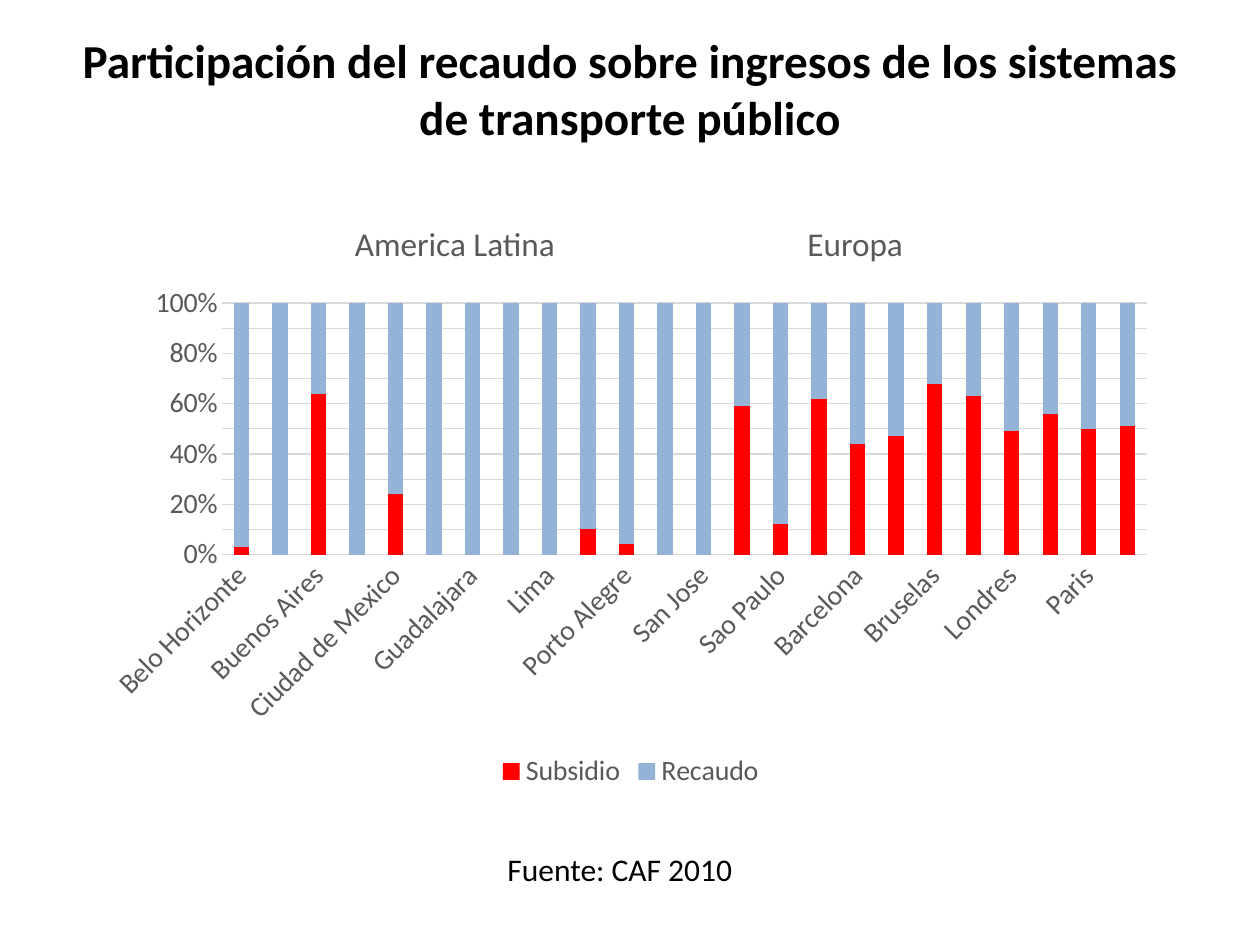
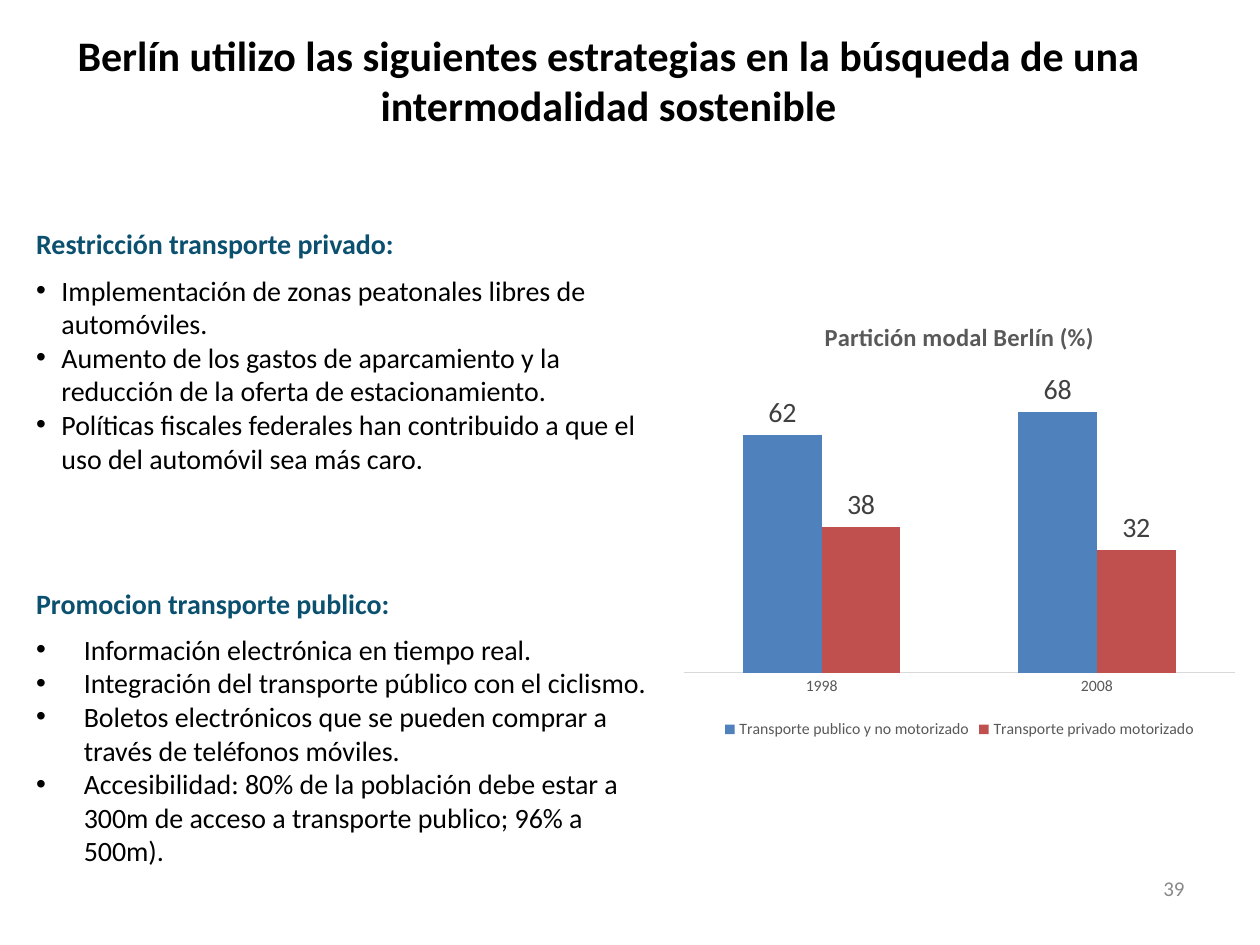
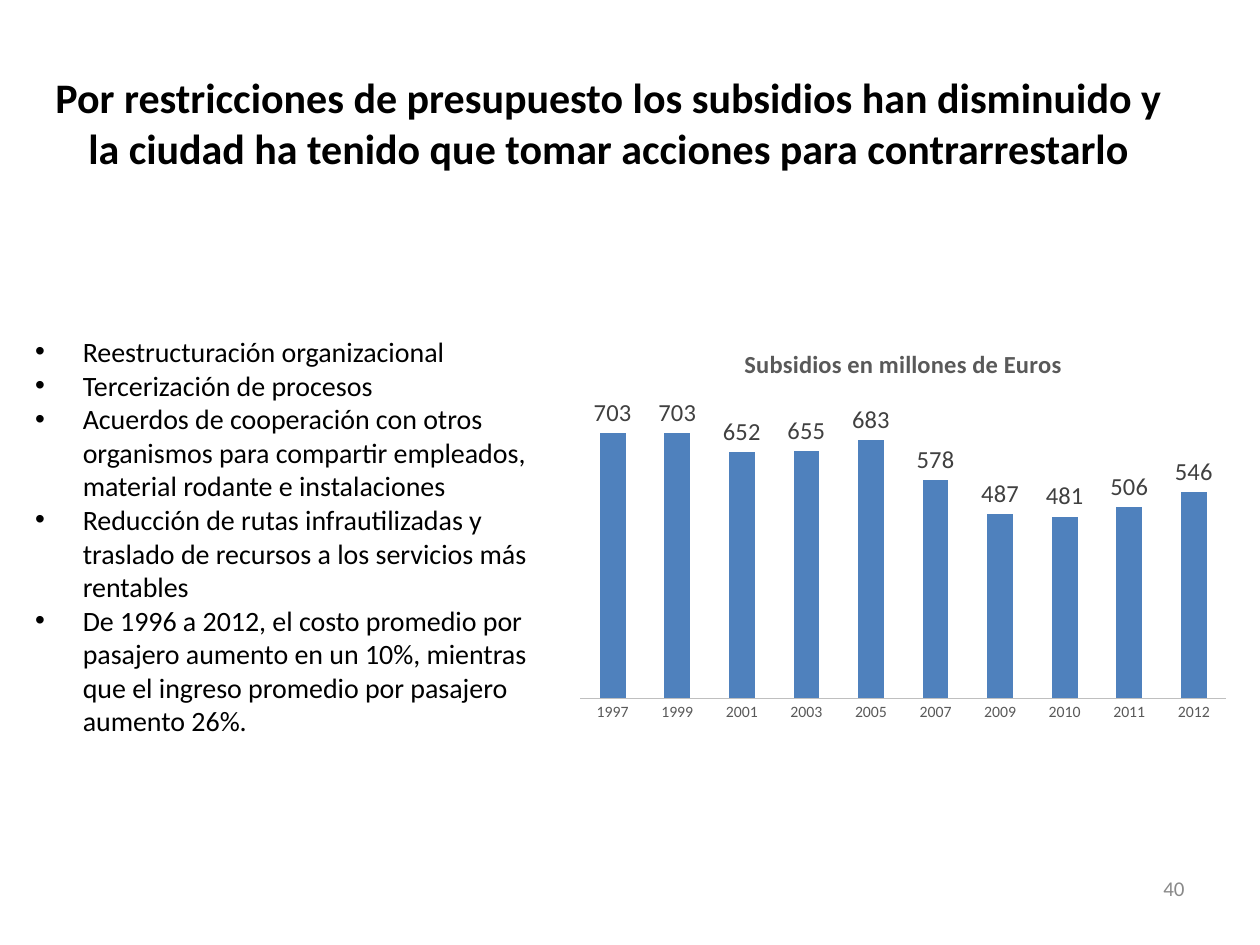
import lxml.etree
import pptx
import pptx.chart.data
import pptx.dml.color
import pptx.enum.chart
import pptx.enum.text
import pptx.oxml.ns
import pptx.util

Cm = pptx.util.Cm
Pt = pptx.util.Pt
RGBColor = pptx.dml.color.RGBColor
Align = pptx.enum.text.PP_ALIGN
Anchor = pptx.enum.text.MSO_ANCHOR
ChartType = pptx.enum.chart.XL_CHART_TYPE
qn = pptx.oxml.ns.qn

FONT = "Calibri"
BLACK = RGBColor(0, 0, 0)
TEAL = RGBColor(0x0B, 0x50, 0x6F)
NUMBER_GREY = RGBColor(0x89, 0x89, 0x89)
CHART_GREY = RGBColor(0x59, 0x59, 0x59)
LABEL_GREY = RGBColor(0x40, 0x40, 0x40)
PALE_GREY = RGBColor(0xD9, 0xD9, 0xD9)
AXIS_GREY = RGBColor(0xBF, 0xBF, 0xBF)
RED = RGBColor(0xFF, 0, 0)
PALE_BLUE = RGBColor(0x95, 0xB3, 0xD7)
BLUE = RGBColor(0x4F, 0x81, 0xBD)
BRICK = RGBColor(0xC0, 0x50, 0x4D)

SUBSIDY_PAIRS = [
    ("Belo Horizonte", 0.03, 0), ("Buenos Aires", 0.64, 0),
    ("Ciudad de Mexico", 0.24, 0), ("Guadalajara", 0, 0),
    ("Lima", 0, 0.1), ("Porto Alegre", 0.04, 0),
    ("San Jose", 0, 0.59), ("Sao Paulo", 0.12, 0.62),
    ("Barcelona", 0.44, 0.47), ("Bruselas", 0.68, 0.63),
    ("Londres", 0.49, 0.56), ("Paris", 0.5, 0.51),
]
REGIONS = [("America Latina", 6.17), ("Europa", 14.24)]
MODAL_SPLIT = [
    ("Transporte publico y no motorizado", (62, 68), BLUE),
    ("Transporte privado motorizado", (38, 32), BRICK),
]
SUBSIDY_TITLE = "Subsidios en millones de Euros"
SUBSIDY_MILLIONS = {
    "1997": 703, "1999": 703, "2001": 652, "2003": 655, "2005": 683,
    "2007": 578, "2009": 487, "2010": 481, "2011": 506, "2012": 546,
}
RESTRICTIONS = [
    "Implementación de zonas peatonales libres de automóviles.",
    "Aumento de los gastos de aparcamiento y la reducción de la oferta de estacionamiento.",
    "Políticas fiscales federales han contribuido a que el uso del automóvil sea más caro.",
]
PROMOTIONS = [
    "Información electrónica en tiempo real.",
    "Integración del transporte público con el ciclismo.",
    "Boletos electrónicos que se pueden comprar a través de teléfonos móviles.",
    "Accesibilidad: 80% de la población debe estar a 300m de acceso a transporte publico; 96% a 500m).",
]
ACTIONS = [
    "Reestructuración organizacional",
    "Tercerización de procesos",
    "Acuerdos de cooperación con otros organismos para compartir empleados, material rodante e instalaciones",
    "Reducción de rutas infrautilizadas y traslado de recursos a los servicios más rentables",
    "De 1996 a 2012, el costo promedio por pasajero aumento en un 10%, mientras que el ingreso promedio por pasajero aumento 26%.",
]


def style_font(font, size, color, bold=False):
    font.name = FONT
    font.size = Pt(size)
    font.bold = bold
    font.color.rgb = color


def add_bullet(para, indent):
    properties = para._p.get_or_add_pPr()
    properties.set("marL", str(Cm(indent)))
    properties.set("indent", str(-Cm(indent)))
    lxml.etree.SubElement(properties, qn("a:buFont")).set("typeface", "Arial")
    lxml.etree.SubElement(properties, qn("a:buChar")).set("char", "•")


def add_text(page, text, place, size=16, color=BLACK, bold=False, align=Align.LEFT,
             anchor=Anchor.MIDDLE, bottom=0.13, bullets=(), indent=0.96):
    box = page.shapes.add_textbox(*map(Cm, place))
    frame = box.text_frame
    frame.word_wrap = True
    frame.vertical_anchor = anchor
    frame.margin_bottom = Cm(bottom)
    lines = [(text, False)] if text else []
    lines += [(bullet, True) for bullet in bullets]
    for index, (line, bulleted) in enumerate(lines):
        para = frame.paragraphs[0] if index == 0 else frame.add_paragraph()
        if bulleted:
            add_bullet(para, indent)
            if text and index == 1:
                para.space_before = Pt(7.2)
        para.alignment = align
        span = para.add_run()
        span.text = line
        style_font(span.font, size, BLACK if bulleted else color, bold and not bulleted)


def add_title(page, text, place, size=24, bottom=0.13):
    add_text(page, text, place, size=size, bold=True, align=Align.CENTER, bottom=bottom)


def add_page_number(page, number):
    add_text(page, number, (18.21, 17.65, 5.92, 1.02), size=12, color=NUMBER_GREY,
             align=Align.RIGHT, bottom=0.64)


def set_plot_layout(chart, plot_place):
    area = chart._chartSpace.chart.plotArea
    for old in area.findall(qn("c:layout")):
        area.remove(old)
    layout = lxml.etree.Element(qn("c:layout"))
    area.insert(0, layout)
    manual = lxml.etree.SubElement(layout, qn("c:manualLayout"))
    settings = [("layoutTarget", "inner"), ("xMode", "edge"), ("yMode", "edge")]
    settings += zip("xywh", plot_place)
    for tag, value in settings:
        lxml.etree.SubElement(manual, qn("c:" + tag)).set("val", str(value))


def add_columns(page, place, plot_place, categories, series_rows, maximum, title=None,
                stacked=False, axis_size=9, axis_color=PALE_GREY, label_size=16,
                legend=True):
    data = pptx.chart.data.CategoryChartData()
    data.categories = categories
    for name, values, _ in series_rows:
        data.add_series(name, values)
    kind = ChartType.COLUMN_STACKED if stacked else ChartType.COLUMN_CLUSTERED
    chart = page.shapes.add_chart(kind, *map(Cm, place), data).chart
    style_font(chart.font, axis_size, CHART_GREY)
    set_plot_layout(chart, plot_place)

    chart.has_title = title is not None
    if title:
        span = chart.chart_title.text_frame.paragraphs[0].add_run()
        span.text = title
        style_font(span.font, 14, CHART_GREY, True)
    chart.has_legend = legend
    if legend:
        chart.legend.position = pptx.enum.chart.XL_LEGEND_POSITION.BOTTOM
        chart.legend.include_in_layout = False
        style_font(chart.legend.font, axis_size, CHART_GREY)

    plot = chart.plots[0]
    plot.gap_width = 150
    plot.overlap = 100 if stacked else 0
    plot.vary_by_categories = False
    for series, (_, _, color) in zip(plot.series, series_rows):
        series.format.fill.solid()
        series.format.fill.fore_color.rgb = color
        series.invert_if_negative = False
        if not stacked:
            labels = series.data_labels
            labels.show_value = True
            labels.position = pptx.enum.chart.XL_LABEL_POSITION.OUTSIDE_END
            style_font(labels.font, label_size, LABEL_GREY)

    for axis in (chart.category_axis, chart.value_axis):
        axis.major_tick_mark = pptx.enum.chart.XL_TICK_MARK.NONE
        style_font(axis.tick_labels.font, axis_size, CHART_GREY)
    chart.category_axis.format.line.color.rgb = axis_color
    chart.category_axis.format.line.width = Pt(0.75)
    chart.value_axis.minimum_scale = 0
    chart.value_axis.maximum_scale = maximum
    chart.value_axis.has_major_gridlines = stacked
    chart.value_axis.visible = stacked
    return chart


def build_fare_share(page):
    add_title(page, "Participación del recaudo sobre ingresos de los sistemas de transporte público",
              (1.27, 0.76, 22.86, 3.18), size=27, bottom=1.28)
    cities = [label for city, _, _ in SUBSIDY_PAIRS for label in (city, "")]
    subsidy = [share for _, *shares in SUBSIDY_PAIRS for share in shares]
    fares = [round(1 - share, 2) for share in subsidy]
    chart = add_columns(page, (1.88, 3.94, 21.67, 12.07), (0.12, 0.18, 0.86, 0.42),
                        cities,
                        [("Subsidio", subsidy, RED), ("Recaudo", fares, PALE_BLUE)],
                        1, stacked=True, axis_size=16)
    axis = chart.value_axis
    axis.major_unit = 0.1
    axis.tick_labels.number_format = "0%"
    axis.tick_labels.number_format_is_linked = False
    axis.format.line.fill.background()
    axis.major_gridlines.format.line.color.rgb = PALE_GREY
    axis.major_gridlines.format.line.width = Pt(0.75)
    label_body = chart.category_axis._element.find(qn("c:txPr")).find(qn("a:bodyPr"))
    label_body.set("rot", "-2700000")
    for region, left in REGIONS:
        add_text(page, region, (left, 4.4, 6, 1), size=19, color=CHART_GREY,
                 align=Align.CENTER)
    add_text(page, "Fuente: CAF 2010", (9.98, 17.02, 5.44, 1.02), size=18, anchor=Anchor.TOP)


def build_berlin(page):
    add_page_number(page, "39")
    add_title(page, "Berlín utilizo las siguientes estrategias en la búsqueda de una intermodalidad sostenible",
              (0.84, 0.94, 22.86, 1.35))
    add_text(page, "Restricción transporte privado:", (0.48, 4.42, 13.08, 5.31),
             color=TEAL, bold=True, bullets=RESTRICTIONS, indent=0.51)
    add_text(page, "Promocion transporte publico:", (0.48, 11.66, 13.08, 5.99),
             color=TEAL, bold=True, bullets=PROMOTIONS)
    add_columns(page, (13.56, 6.05, 11.56, 8.94), (0.02, 0.15, 0.96, 0.69),
                ["1998", "2008"], MODAL_SPLIT, 80, title="Partición modal Berlín (%)")


def build_subsidies(page):
    add_page_number(page, "40")
    add_title(page, "Por restricciones de presupuesto los subsidios han disminuido y la ciudad ha tenido que tomar acciones para contrarrestarlo",
              (0.84, 2.31, 22.86, 1.35), bottom=1.16)
    add_text(page, None, (0.46, 6.58, 11.38, 8.46), bullets=ACTIONS)
    add_columns(page, (11.43, 6.6, 13.56, 8.13), (0.02, 0.17, 0.96, 0.75),
                list(SUBSIDY_MILLIONS),
                [(SUBSIDY_TITLE, list(SUBSIDY_MILLIONS.values()), BLUE)], 800,
                title=SUBSIDY_TITLE, axis_color=AXIS_GREY, label_size=14, legend=False)


def main():
    deck = pptx.Presentation()
    deck.slide_width = Cm(25.4)
    deck.slide_height = Cm(19.05)
    for build in (build_fare_share, build_berlin, build_subsidies):
        build(deck.slides.add_slide(deck.slide_layouts[6]))
    deck.save("out.pptx")


if __name__ == "__main__":
    main()
